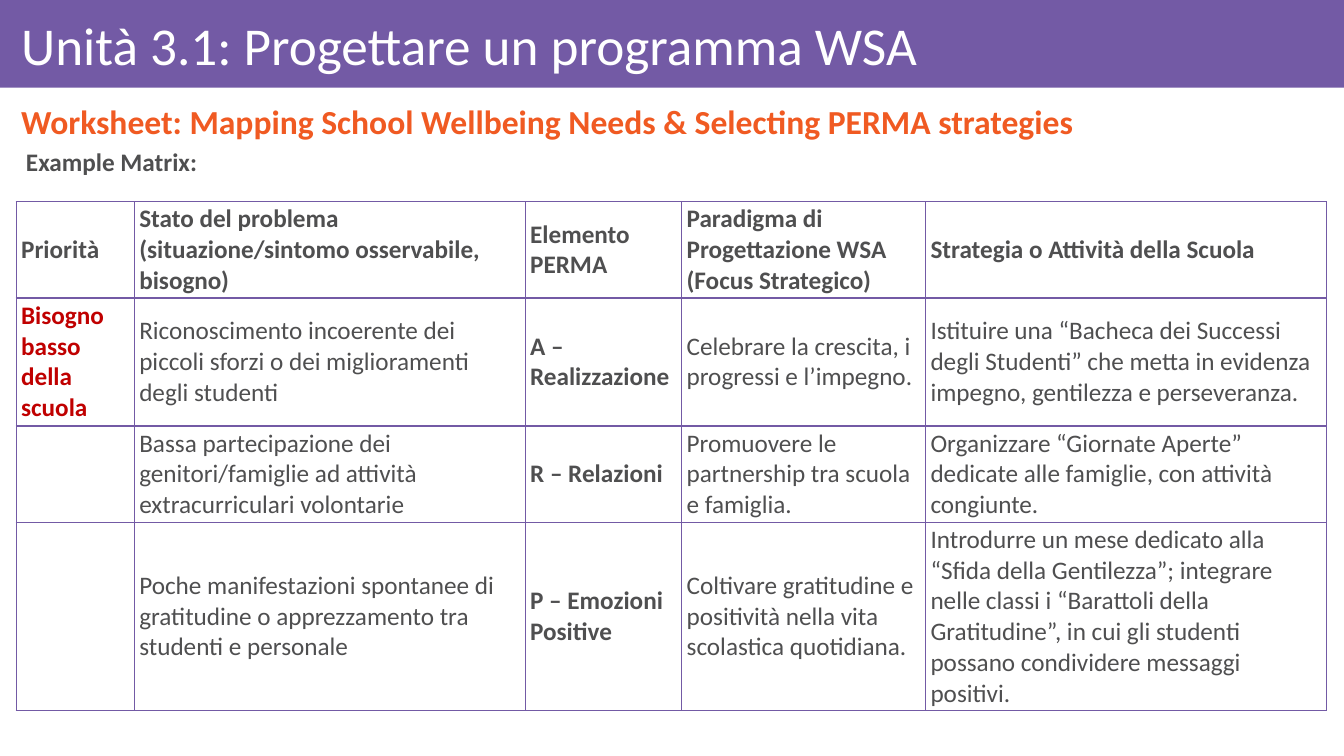
from lxml import etree
from pptx import Presentation
from pptx.dml.color import RGBColor
from pptx.enum import shapes, text
from pptx.oxml import ns
from pptx.util import Pt

TITLE = "Unità 3.1: Progettare un programma WSA"
HEAD = "Worksheet: Mapping School Wellbeing Needs & Selecting PERMA strategies"
LABEL = "Example Matrix:"
ROWS = [
    ("Priorità",
     "Stato del problema (situazione/sintomo osservabile, bisogno)",
     "Elemento PERMA",
     "Paradigma di Progettazione WSA (Focus Strategico)",
     "Strategia o Attività della Scuola"),
    ("Bisogno basso della scuola",
     "Riconoscimento incoerente dei piccoli sforzi o dei miglioramenti degli studenti",
     "A – Realizzazione",
     "Celebrare la crescita, i progressi e l’impegno.",
     "Istituire una “Bacheca dei Successi degli Studenti” che metta in evidenza "
     "impegno, gentilezza e perseveranza."),
    ("",
     "Bassa partecipazione dei genitori/famiglie ad attività extracurriculari volontarie",
     "R – Relazioni",
     "Promuovere le partnership tra scuola e famiglia.",
     "Organizzare “Giornate Aperte” dedicate alle famiglie, con attività congiunte."),
    ("",
     "Poche manifestazioni spontanee di gratitudine o apprezzamento tra studenti e personale",
     "P – Emozioni Positive",
     "Coltivare gratitudine e positività nella vita scolastica quotidiana.",
     "Introdurre un mese dedicato alla “Sfida della Gentilezza”; integrare nelle classi "
     "i “Barattoli della Gratitudine”, in cui gli studenti possano condividere "
     "messaggi positivi."),
]
WIDTHS = (84.4, 279.2, 111.8, 174.2, 286.6)
HEIGHTS = (68.8, 91.5, 68.8, 134.7)
THEME = dict(font="Calibri", violet="735AA5", orange="F05A22", grey="4F4F50",
             red="C00000", white="FFFFFF", title=38, head=24, body=18, rule=1)


def write(frame, words, size="body", color="grey", bold=False, space=None,
          align=text.PP_ALIGN.LEFT):
    para = frame.paragraphs[0]
    para.alignment = align
    para.space_before = Pt(0)
    if space:
        para.line_spacing = space
    run = para.add_run()
    run.text = words
    font = run.font
    font.name, font.size, font.bold = THEME["font"], Pt(THEME[size]), bold
    font.color.rgb = RGBColor.from_string(THEME[color])
    return para


def place(shape, left, top, width, height, pad):
    shape.left, shape.top = Pt(left), Pt(top)
    shape.width, shape.height = Pt(width), Pt(height)
    frame = shape.text_frame
    frame.word_wrap = True
    frame.auto_size = text.MSO_AUTO_SIZE.NONE
    frame.vertical_anchor = text.MSO_ANCHOR.MIDDLE
    (frame.margin_left, frame.margin_top,
     frame.margin_right, frame.margin_bottom) = map(Pt, pad)
    return frame


def border(cell):
    props = cell._tc.get_or_add_tcPr()
    for index, side in enumerate(("lnL", "lnR", "lnT", "lnB")):
        line = etree.Element(ns.qn("a:" + side), w=str(Pt(THEME["rule"])))
        fill = etree.SubElement(line, ns.qn("a:solidFill"))
        etree.SubElement(fill, ns.qn("a:srgbClr"), val=THEME["violet"])
        props.insert(index, line)


def matrix(slide):
    table = slide.shapes.add_table(len(ROWS), len(WIDTHS), Pt(11.5), Pt(144),
                                   Pt(sum(WIDTHS)), Pt(sum(HEIGHTS))).table
    table.first_row = table.horz_banding = False
    for col, width in zip(table.columns, WIDTHS):
        col.width = Pt(width)
    for r, (row, height) in enumerate(zip(ROWS, HEIGHTS)):
        table.rows[r].height = Pt(height)
        for c, words in enumerate(row):
            cell = table.cell(r, c)
            cell.fill.background()
            border(cell)
            cell.margin_left = cell.margin_right = Pt(3.6)
            cell.margin_top = cell.margin_bottom = Pt(1.44)
            cell.vertical_anchor = text.MSO_ANCHOR.MIDDLE
            if words:
                write(cell.text_frame, words, bold=r == 0 or c in (0, 2),
                      color="red" if r and c == 0 else "grey")


def main():
    deck = Presentation()
    deck.slide_width, deck.slide_height = Pt(960), Pt(540)
    slide = deck.slides.add_slide(deck.slide_layouts[1])
    title, body = slide.placeholders

    bar = slide.shapes.add_shape(shapes.MSO_SHAPE.RECTANGLE, 0, 0, Pt(960), Pt(62.6))
    bar.shadow.inherit = False
    bar.fill.solid()
    bar.fill.fore_color.rgb = RGBColor.from_string(THEME["violet"])
    bar.line.fill.background()
    title._element.addprevious(bar._element)

    frame = place(title, 7.9, 6.5, 940.3, 56.2, (7.2, 4.3, 4.3, 4.3))
    write(frame, TITLE, size="title", color="white", space=0.9)

    frame = place(body, 7.9, 67, 940.3, 43.2, (7.2, 3.6, 7.2, 3.6))
    para = write(frame, HEAD, size="head", color="orange", bold=True, space=0.9,
                 align=text.PP_ALIGN.JUSTIFY)
    props = para._p.get_or_add_pPr()
    props.set("marL", "0")
    props.set("indent", "0")
    etree.SubElement(props, ns.qn("a:buNone"))

    label = slide.shapes.add_textbox(0, 0, 0, 0)
    frame = place(label, 11.5, 101, 484.6, 29, (7.2, 3.6, 7.2, 3.6))
    write(frame, LABEL, bold=True)

    matrix(slide)
    deck.save("out.pptx")


if __name__ == "__main__":
    main()
